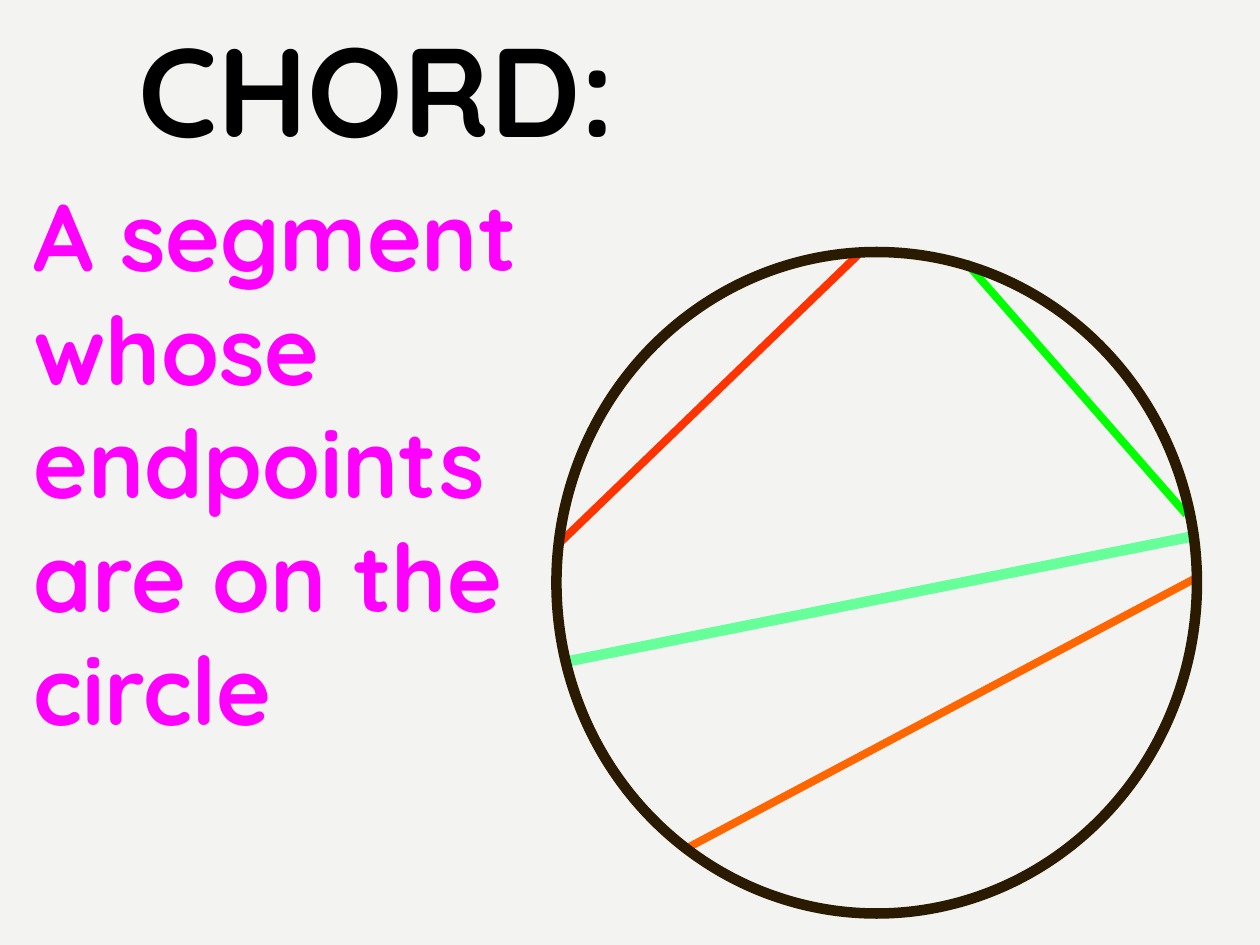
"""Build a slide that defines a chord and shows four chords of a circle."""
from pptx import Presentation
from pptx.dml.color import RGBColor as RGB
from pptx.enum.shapes import MSO_CONNECTOR as Connector, MSO_SHAPE as Shape
from pptx.enum.text import MSO_AUTO_SIZE as AutoSize
from pptx.oxml.ns import qn
from pptx.util import Pt

COLORS = {
    "background": "F3F3F2",
    "title": "000000",
    "definition": "FF00FF",
    "circle": "2A1A00",
    "orange": "FF6600",
    "red": "FF3300",
    "green": "00FF00",
    "mint": "66FF99",
}
FONT = "Quicksand"
TEXTS = [
    ("CHORD:", "title", 72, (72, 3, 342, 94.3)),
    ("A segment whose endpoints are on the circle", "definition", 54,
     (12, 97.9, 318, 334.1)),
]
CHORDS = [
    ("orange", (390, 486), (684, 330), 4.5),
    ("red", (318, 312), (492, 144), 4.5),
    ("green", (552, 150), (678, 294), 4.5),
    ("mint", (324, 378), (684, 306), 6),
]
CIRCLE = (318, 144, 366, 378)


def points(lengths):
    return [Pt(length) for length in lengths]


def color(name):
    return RGB.from_string(COLORS[name])


def set_line(outlined, name, width):
    outlined.line.color.rgb = color(name)
    outlined.line.width = Pt(width)


def add_words(slide, words, name, size, place):
    box = slide.shapes.add_textbox(*points(place))
    frame = box.text_frame
    frame.word_wrap = True
    frame.auto_size = AutoSize.SHAPE_TO_FIT_TEXT
    paragraph = frame.paragraphs[0]
    paragraph.text = words
    font = paragraph.font
    font.name, font.size, font.bold = FONT, Pt(size), True
    font.color.rgb = color(name)


def add_chord(slide, name, start, end, width):
    chord = slide.shapes.add_connector(Connector.STRAIGHT, *points(start + end))
    set_line(chord, name, width)
    properties = chord._element.spPr
    properties.append(properties.makeelement(qn("a:effectLst"), {}))


def add_circle(slide):
    circle = slide.shapes.add_shape(Shape.OVAL, *points(CIRCLE))
    circle.shadow.inherit = False
    circle.fill.background()
    set_line(circle, "circle", 6)


def main():
    deck = Presentation()
    deck.slide_width, deck.slide_height = Pt(720), Pt(540)
    slide = deck.slides.add_slide(deck.slide_layouts[6])
    backdrop = slide.background.fill
    backdrop.solid()
    backdrop.fore_color.rgb = color("background")
    for text in TEXTS:
        add_words(slide, *text)
    for chord in CHORDS:
        add_chord(slide, *chord)
    add_circle(slide)
    deck.save("out.pptx")


if __name__ == "__main__":
    main()
